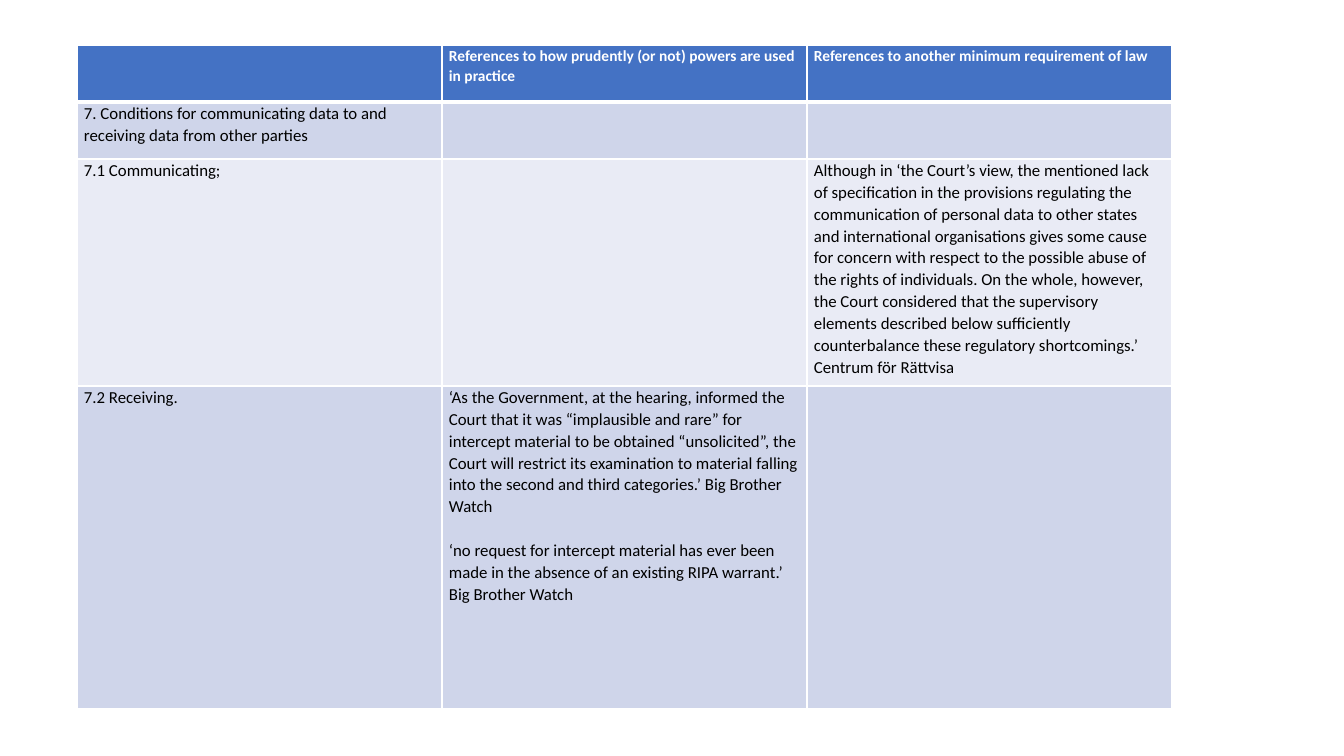
from dataclasses import dataclass

from lxml import etree
from pptx import Presentation
from pptx import util as u
from pptx.dml.color import RGBColor
from pptx.oxml import ns

SCALE = 12192000 / 1344  # EMU per px
COLORS = {
    "head": "4472C4",
    "dark": "CFD5EA",
    "light": "E9EBF5",
    "white": "FFFFFF",
    "black": "000000",
}
HEAD = {"name": "Calibri", "size": u.Pt(11), "bold": True}
BODY = {"name": "Calibri", "size": u.Pt(12), "bold": False}
INSETS = {
    "margin_left": 7,
    "margin_right": 7,
    "margin_top": 0,
    "margin_bottom": 0,
}
LEFT, TOP, COL = 77, 45, 365
GAP = u.Pt(15.6)  # one body line


@dataclass
class Row:
    height: int
    fill: str
    cells: tuple[str, str, str]  # a newline starts a new paragraph
    ink: str = "black"
    top: int = 1
    base: int = 1


ROWS = [
    Row(57, "head", (
        "",
        "References to how prudently (or not) powers are used in practice",
        "References to another minimum requirement of law",
    ), ink="white", base=3),
    Row(57, "dark", (
        "7. Conditions for communicating data to and receiving data "
        "from other parties",
        "",
        "",
    ), top=3),
    Row(227, "light", (
        "7.1 Communicating;",
        "",
        "Although in ‘the Court’s view, the mentioned lack of "
        "specification in the provisions regulating the communication of "
        "personal data to other states and international "
        "organisations gives some cause for concern with respect to the "
        "possible abuse of the rights of individuals. On the whole, "
        "however, the Court considered that the supervisory elements "
        "described below sufficiently counterbalance these regulatory "
        "shortcomings.’ Centrum för Rättvisa",
    )),
    Row(323, "dark", (
        "7.2 Receiving.",
        "‘As the Government, at the hearing, informed the Court that it was "
        "“implausible and rare” for intercept material to be obtained "
        "“unsolicited”, the Court will restrict its examination to material "
        "falling into the second and third categories.’ Big Brother Watch\n"
        "‘no request for intercept material has ever been made in the absence "
        "of an existing RIPA warrant.’ Big Brother Watch",
        "",
    )),
]


def px(size: int) -> int:
    return round(size * SCALE)


def rgb(name: str) -> RGBColor:
    return RGBColor.from_string(COLORS[name])


def edge(cell, row: Row) -> None:
    """Give the cell white borders on all four sides."""
    props = cell._tc.get_or_add_tcPr()
    widths = {"lnL": 1, "lnR": 1, "lnT": row.top, "lnB": row.base}
    for tag, width in widths.items():
        line = etree.SubElement(props, ns.qn(f"a:{tag}"), w=str(u.Pt(width)))
        fill = etree.SubElement(line, ns.qn("a:solidFill"))
        etree.SubElement(fill, ns.qn("a:srgbClr"), val=COLORS["white"])


def write(cell, words: str, row: Row) -> None:
    for name, size in INSETS.items():
        setattr(cell, name, px(size))
    cell.text = words
    for i, para in enumerate(cell.text_frame.paragraphs):
        para.line_spacing = 1.07
        if i:
            para.space_before = GAP
        for run in para.runs:
            for name, value in (HEAD if row.fill == "head" else BODY).items():
                setattr(run.font, name, value)
            run.font.color.rgb = rgb(row.ink)


def draw(slide) -> None:
    count = len(ROWS[0].cells)
    high = sum(row.height for row in ROWS)
    table = slide.shapes.add_table(
        len(ROWS), count, px(LEFT), px(TOP), px(COL * count), px(high)
    ).table
    table.horz_banding = False
    for col in table.columns:
        col.width = px(COL)
    for line, row in zip(table.rows, ROWS):
        line.height = px(row.height)
        for cell, words in zip(line.cells, row.cells):
            edge(cell, row)
            cell.fill.solid()
            cell.fill.fore_color.rgb = rgb(row.fill)
            if words:
                write(cell, words, row)


def main() -> None:
    deck = Presentation()
    deck.slide_width, deck.slide_height = px(1344), px(756)
    draw(deck.slides.add_slide(deck.slide_layouts[6]))
    deck.save("out.pptx")


if __name__ == "__main__":
    main()
